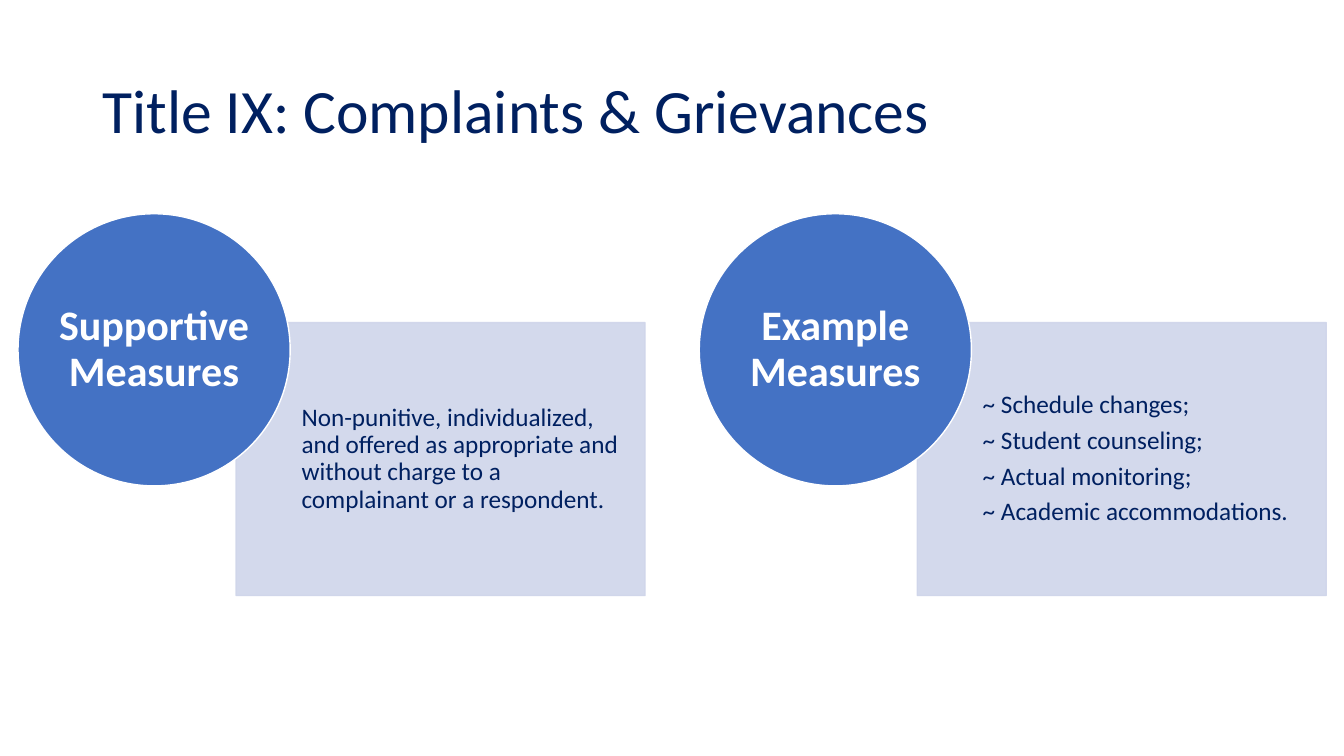
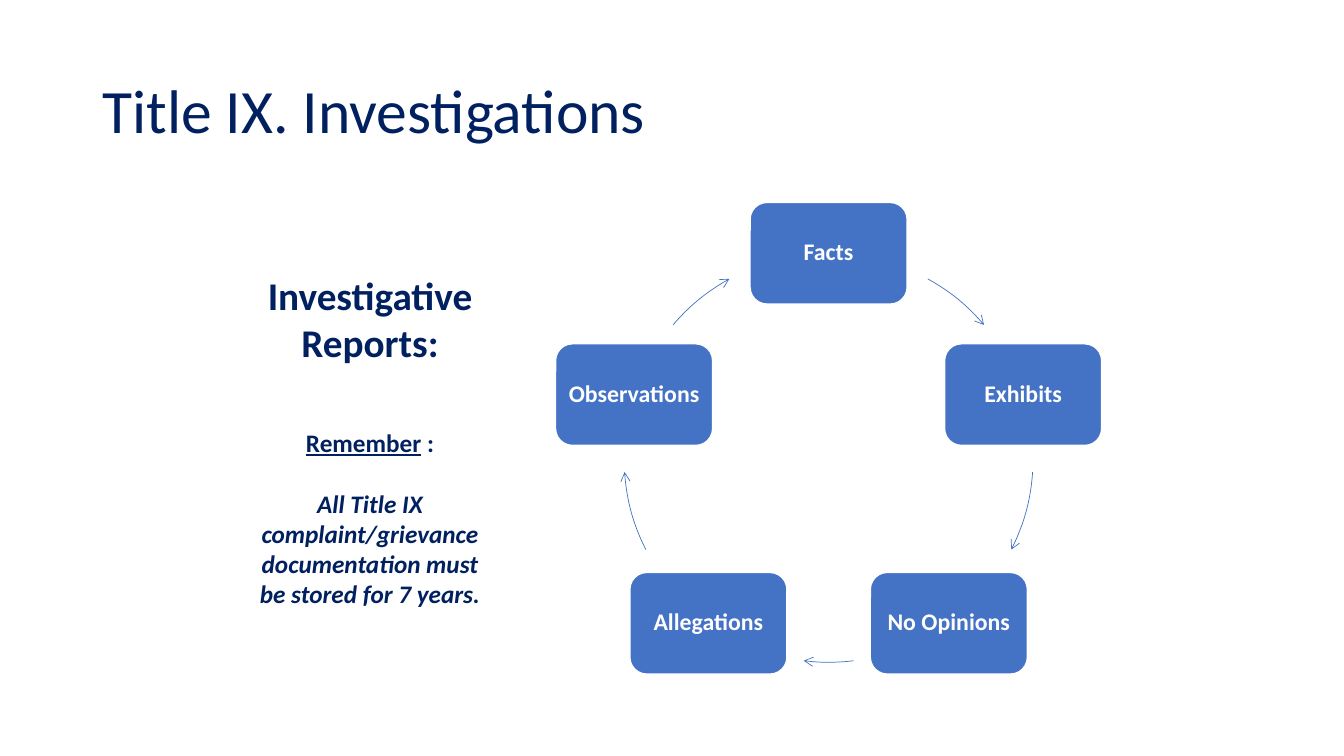
"""Builds two Title IX training slides: supportive measures and the investigation cycle."""
from math import cos, radians, sin

from lxml import etree
from pptx import Presentation
from pptx.dml.color import RGBColor
from pptx.enum.shapes import MSO_SHAPE
from pptx.enum.text import MSO_ANCHOR, PP_ALIGN
from pptx.oxml.ns import qn
from pptx.util import Inches, Pt

ARC, OVAL = MSO_SHAPE.ARC, MSO_SHAPE.OVAL
RECTANGLE, ROUNDED = MSO_SHAPE.RECTANGLE, MSO_SHAPE.ROUNDED_RECTANGLE
TOP, MIDDLE = MSO_ANCHOR.TOP, MSO_ANCHOR.MIDDLE
LEFT, CENTER = PP_ALIGN.LEFT, PP_ALIGN.CENTER

FONT = "Calibri"
COLORS = {"navy": "002060", "blue": "4472C4", "pale": "CFD5EA", "white": "FFFFFF"}
COLUMNS, ROWS = 32, 18
WIDTH, HEIGHT = Inches(13.333), Inches(7.5)

TOPICS = [
    ("Supportive Measures", [
        "Non-punitive, individualized, and offered as appropriate and "
        "without charge to a complainant or a respondent."]),
    ("Example Measures", [
        "~ Schedule changes;", "~ Student counseling;",
        "~ Actual monitoring;", "~ Academic accommodations."]),
]
STAGES = ["Facts", "Exhibits", "No Opinions", "Allegations", "Observations"]
ARROW_ANGLES = [(29, 49.5), (94, 116.7), (173, 187), (243.3, 266), (310.5, 331)]


def rgb(name):
    return RGBColor.from_string(COLORS[name])


def write(frame, text, size=18, color="navy", bold=False, italic=False, underline=False,
          align=LEFT, spacing=0.9, before=0, after=0, joined=False):
    """Writes a paragraph, or a further run of the last one when joined."""
    paragraph = frame.paragraphs[-1]
    if paragraph.runs and not joined:
        paragraph = frame.add_paragraph()
    if not joined:
        paragraph.alignment, paragraph.line_spacing = align, spacing
        paragraph.space_before, paragraph.space_after = Pt(before), Pt(after)
    run = paragraph.add_run()
    run.text = text
    font = run.font
    font.name, font.size, font.color.rgb = FONT, Pt(size), rgb(color)
    font.bold, font.italic, font.underline = bold, italic, underline


class Deck:
    """Holds the presentation, its shared style and the current slide."""

    def __init__(self):
        self.file = Presentation()
        self.file.slide_width, self.file.slide_height = WIDTH, HEIGHT
        self.slide = None

    def box(self, column, row, columns, rows):
        across, down = WIDTH / COLUMNS, HEIGHT / ROWS
        return [round(v) for v in (column * across, row * down, columns * across, rows * down)]

    def frame(self, shape, anchor, insets):
        frame = shape.text_frame
        frame.word_wrap, frame.vertical_anchor = True, anchor
        (frame.margin_left, frame.margin_top,
         frame.margin_right, frame.margin_bottom) = [Inches(inset) for inset in insets]
        return frame

    def new_slide(self, title):
        self.slide = self.file.slides.add_slide(self.file.slide_layouts[6])
        write(self.text(2.2, 0.96, 27.6, 3.48, MIDDLE), title, size=44)

    def text(self, column, row, columns, rows, anchor=TOP):
        area = self.slide.shapes.add_textbox(*self.box(column, row, columns, rows))
        return self.frame(area, anchor, (0.1, 0.05, 0.1, 0.05))

    def shape(self, kind, place, fill, line, insets=(0, 0, 0, 0), opacity=None):
        shape = self.slide.shapes.add_shape(kind, *self.box(*place))
        shape.shadow.inherit = False
        shape.fill.solid()
        shape.fill.fore_color.rgb = rgb(fill)
        shape.line.color.rgb, shape.line.width = rgb(line), Pt(1)
        if opacity:
            for color in shape.element.spPr.iter(qn("a:srgbClr")):
                etree.SubElement(color, qn("a:alpha"), val=str(opacity * 1000))
        return self.frame(shape, MIDDLE, insets)

    def topic(self, column, row, heading, lines):
        panel = self.shape(RECTANGLE, (column + 5.19, row + 2.59, 9.74, 6.5), "pale", "pale",
                           (0.65, 0.13, 0.13, 0.13), opacity=90)
        for line in lines:
            write(panel, line, after=6 if line != lines[-1] else 0)
        circle = self.shape(OVAL, (column, row, 6.48, 6.48), "blue", "white")
        write(circle, heading, size=30, color="white", bold=True, align=CENTER)

    def arc_arrow(self, column, row, radius, start, end):
        place = self.box(column - radius, row - radius, 2 * radius, 2 * radius)
        arc = self.slide.shapes.add_shape(ARC, *place)
        arc.shadow.inherit = False
        arc.fill.background()
        for index, angle in enumerate((start, end)):
            arc.adjustments[index] = (angle - 90) % 360 * 0.6
        arc.line.color.rgb, arc.line.width = rgb("blue"), Pt(0.5)
        etree.SubElement(arc.line._get_or_add_ln(), qn("a:tailEnd"), type="arrow")

    def cycle(self, column, row, radius, stages):
        wide, high = 3.74, 2.42
        for index, (stage, arrow) in enumerate(zip(stages, ARROW_ANGLES)):
            angle = radians(index * 360 / len(stages))
            place = (column + radius * sin(angle) - wide / 2,
                     row - radius * cos(angle) - high / 2, wide, high)
            card = self.shape(ROUNDED, place, "blue", "white", (0.07, 0.07, 0.07, 0.07))
            write(card, stage, size=17, color="white", bold=True, align=CENTER)
            self.arc_arrow(column, row, radius, *arrow)


def main():
    deck = Deck()

    deck.new_slide("Title IX: Complaints & Grievances")
    for index, (heading, lines) in enumerate(TOPICS):
        deck.topic(0.43 + 16.22 * index, 5.09, heading, lines)

    deck.new_slide("Title IX. Investigations")
    deck.cycle(19.73, 10.9, 4.87, STAGES)
    reports = deck.text(5.93, 6.34, 5.76, 8.33)
    centered = {"bold": True, "align": CENTER, "spacing": 1.0}
    write(reports, "Investigative Reports:", size=28, **centered)
    write(reports, "Remember", underline=True, before=44, **centered)
    write(reports, " :", bold=True, joined=True)
    write(reports, "All Title IX complaint/grievance documentation must be stored for 7 years.",
          italic=True, before=22, **centered)

    deck.file.save("out.pptx")


if __name__ == "__main__":
    main()
